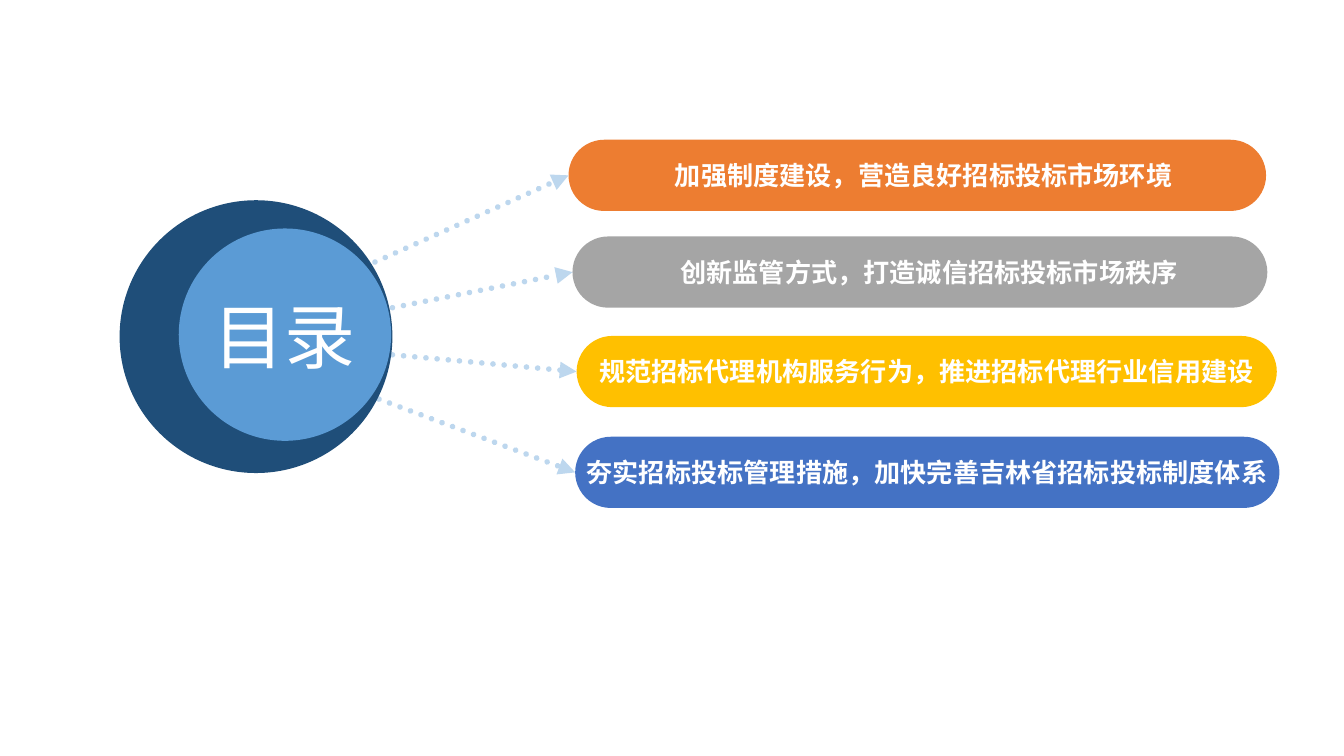
from pptx import Presentation
from pptx.dml.color import RGBColor
from pptx.enum.dml import MSO_LINE
from pptx.enum.shapes import MSO_CONNECTOR, MSO_SHAPE
from pptx.enum.text import MSO_ANCHOR, PP_ALIGN
from pptx.oxml.ns import qn
from pptx.util import Inches, Pt
from lxml.etree import SubElement


def rgb(code):
    return RGBColor.from_string(code)


def write(shape, text, size, bold=False, indent=0):
    """Centre white text in a shape; indent is the left inset in inches."""
    frame = shape.text_frame
    frame.word_wrap = True
    frame.vertical_anchor = MSO_ANCHOR.MIDDLE
    frame.margin_left = Inches(indent)
    frame.margin_right = frame.margin_top = frame.margin_bottom = 0
    paragraph = frame.paragraphs[0]
    paragraph.alignment = PP_ALIGN.CENTER
    run = paragraph.add_run()
    run.text = text
    run.font.name = "Arial"
    run.font.size = Pt(size)
    run.font.bold = bold
    run.font.color.rgb = rgb("FFFFFF")


prs = Presentation()
prs.slide_width = Inches(10)
prs.slide_height = Inches(10 * 9 / 16)
slide = prs.slides.add_slide(prs.slide_layouts[6])
shapes = slide.shapes

# Chapters: text, fill, left, top, width, text indent, arrow start
chapters = [
    ("加强制度建设，营造良好招标投标市场环境", "ED7D31", 4.23, 1.04, 5.19, 0.1, (2.79, 1.95)),
    ("创新监管方式，打造诚信招标投标市场秩序", "A5A5A5", 4.26, 1.76, 5.17, 0.14, (2.92, 2.29)),
    ("规范招标代理机构服务行为，推进招标代理行业信用建设", "FFC000", 4.29, 2.5, 5.21, 0, (2.92, 2.64)),
    ("夯实招标投标管理措施，加快完善吉林省招标投标制度体系", "4472C4", 4.28, 3.25, 5.24, 0, (2.82, 2.97)),
]
bar_height = 0.53

for title, color, left, top, width, indent, (start_x, start_y) in chapters:
    bar = shapes.add_shape(MSO_SHAPE.ROUNDED_RECTANGLE, Inches(left), Inches(top),
                           Inches(width), Inches(bar_height))
    bar.adjustments[0] = 0.5
    bar.shadow.inherit = False
    bar.fill.solid()
    bar.fill.fore_color.rgb = rgb(color)
    bar.line.fill.background()
    write(bar, title, size=14, bold=True, indent=indent)

    arrow = shapes.add_connector(MSO_CONNECTOR.STRAIGHT, Inches(start_x), Inches(start_y),
                                 Inches(left), Inches(top + bar_height / 2))
    arrow.end_connect(bar, 1)
    arrow.line.color.rgb = rgb("BDD7EE")
    arrow.line.width = Pt(3)
    arrow.line.dash_style = MSO_LINE.ROUND_DOT
    stroke = arrow.line._get_or_add_ln()
    stroke.set("cap", "rnd")
    SubElement(stroke, qn("a:tailEnd"), type="triangle")
    SubElement(arrow._element.spPr, qn("a:effectLst"))

# Title disc, with the darker circle behind
for left, top, diameter, color in [(0.89, 1.49, 2.03, "1F4E79"), (1.33, 1.7, 1.58, "5B9BD5")]:
    disc = shapes.add_shape(MSO_SHAPE.OVAL, Inches(left), Inches(top),
                            Inches(diameter), Inches(diameter))
    disc.shadow.inherit = False
    disc.fill.solid()
    disc.fill.fore_color.rgb = rgb(color)
    disc.line.fill.background()
write(disc, "目录", size=38)

prs.save("out.pptx")
